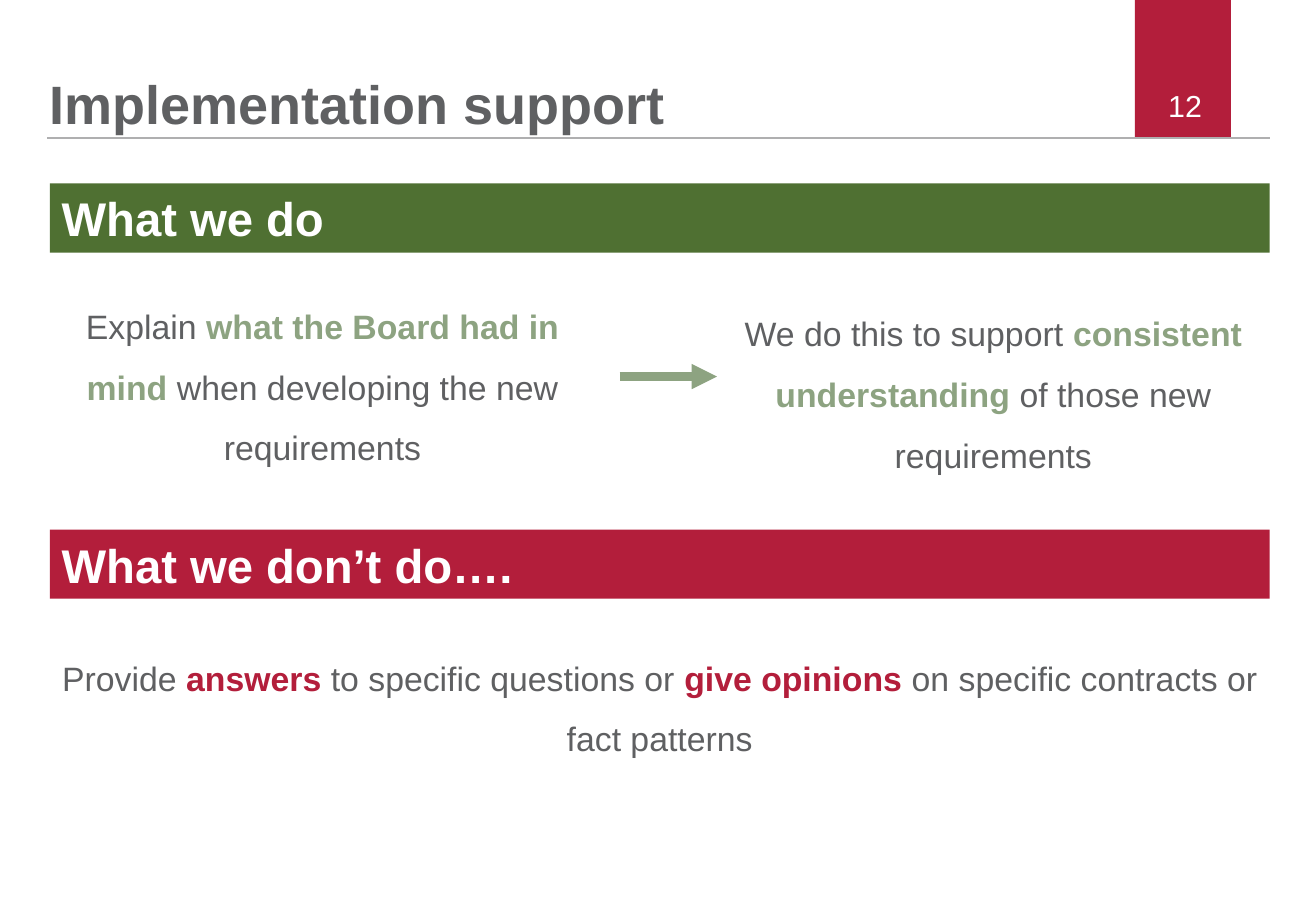
from pptx import Presentation
from pptx.dml.color import RGBColor
from pptx.enum import shapes, text
from pptx.oxml import parse_xml
from pptx.oxml.ns import nsdecls
from pptx.util import Inches, Pt

HUES = {"red": "B31E3B", "green": "4F7032", "sage": "8DA381",
        "gray": "5F6062", "rule": "AFAFB0", "white": "FFFFFF"}


def write(shape, runs, size, align, inset=(0.1, 0.05), anchor="MIDDLE"):
    frame = shape.text_frame
    frame.word_wrap = True
    frame.auto_size = text.MSO_AUTO_SIZE.NONE
    frame.vertical_anchor = text.MSO_ANCHOR[anchor]
    frame.margin_left = frame.margin_right = Inches(inset[0])
    frame.margin_top = frame.margin_bottom = Inches(inset[1])
    para = frame.paragraphs[0]
    para.alignment = text.PP_ALIGN[align]
    for words, hue, bold in runs:
        run = para.add_run()
        run.text = words
        run.font.name = "Arial"
        run.font.size = Pt(size)
        run.font.bold = bold
        run.font.color.rgb = RGBColor.from_string(HUES[hue])
    return para


def block(box, hue):
    shape = slide.shapes.add_shape(shapes.MSO_SHAPE.RECTANGLE, *map(Inches, box))
    shape.shadow.inherit = False
    shape.fill.solid()
    shape.fill.fore_color.rgb = RGBColor.from_string(HUES[hue])
    shape.line.fill.background()
    return shape


deck = Presentation()
deck.slide_width, deck.slide_height = Inches(10.83), Inches(7.5)
slide = deck.slides.add_slide(deck.slide_layouts[5])

title = slide.shapes.title
title.left, title.top, title.width, title.height = map(Inches, (0.41, 0.35, 8.6, 0.77))
para = write(title, [("Implementation support", "gray", True)], 32, "LEFT", (0, 0), "BOTTOM")
para.line_spacing = 0.9

block((9.34, 0, 0.79, 1.14), "red")
page = slide.shapes.add_textbox(*map(Inches, (7.46, 0.67, 2.53, 0.4)))
write(page, [("12", "white", False)], 18, "RIGHT")

for label, top, hue in [("What we do", 1.51, "green"), ("What we don’t do….", 4.36, "red")]:
    bar = block((0.41, top, 10.04, 0.57), hue)
    write(bar, [(label, "white", True)], 28, "LEFT")

bodies = [
    ((0.32, 2.34, 4.67, 1.52), 12,
     [("Explain ", "gray", False), ("what the Board had in mind ", "sage", True),
      ("when developing the new requirements", "gray", False)]),
    ((5.9, 2.38, 4.55, 1.56), 0,
     [("We do this to support ", "gray", False), ("consistent understanding", "sage", True),
      (" of those new requirements", "gray", False)]),
    ((0.41, 5.01, 10.04, 1.47), 12,
     [("Provide ", "gray", False), ("answers", "red", True),
      (" to specific questions or ", "gray", False), ("give opinions ", "red", True),
      ("on specific contracts or fact patterns", "gray", False)]),
]
for box, after, runs in bodies:
    body = slide.shapes.add_textbox(*map(Inches, box))
    para = write(body, runs, 20, "CENTER")
    para.line_spacing = 1.5
    para.space_after = Pt(after)

for start, end, y, hue, width, head in [(0.39, 10.45, 1.14, "rule", 1.2, False),
                                        (5.1, 5.9, 3.1, "sage", 5, True)]:
    line = slide.shapes.add_connector(shapes.MSO_CONNECTOR.STRAIGHT,
                                      Inches(start), Inches(y), Inches(end), Inches(y))
    line.line.color.rgb = RGBColor.from_string(HUES[hue])
    line.line.width = Pt(width)
    if head:
        line.line._get_or_add_ln().append(
            parse_xml(f'<a:tailEnd {nsdecls("a")} type="triangle"/>'))
    line._element.spPr.append(parse_xml(f'<a:effectLst {nsdecls("a")}/>'))

deck.save("out.pptx")
